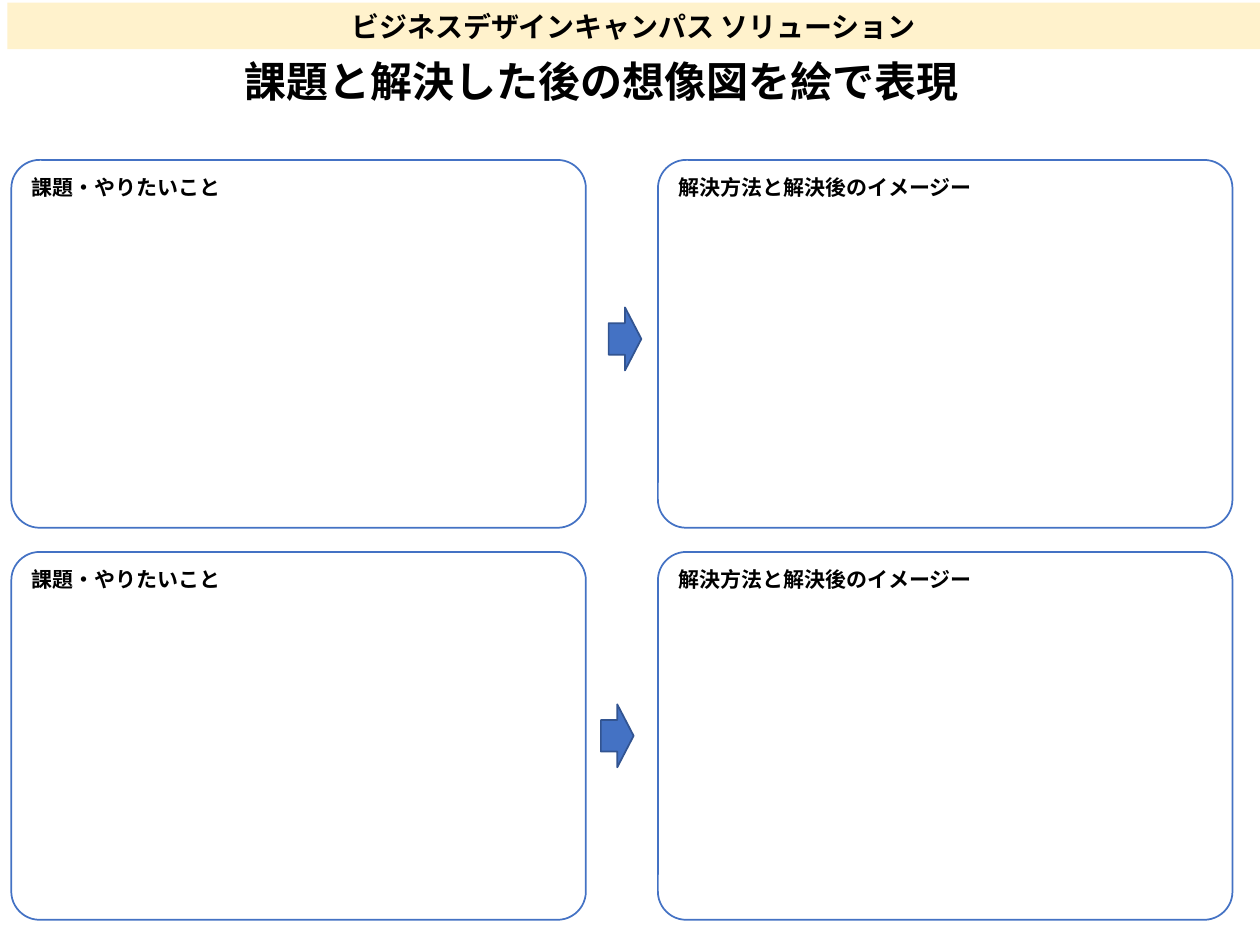
from pptx import Presentation
from pptx.dml.color import RGBColor
from pptx.enum.shapes import MSO_SHAPE as Shape
from pptx.enum.text import MSO_ANCHOR as Anchor, MSO_AUTO_SIZE as Auto, PP_ALIGN as Align
from pptx.oxml.ns import qn
from pptx.util import Pt
from lxml import etree

BLACK = RGBColor(0x00, 0x00, 0x00)
WHITE = RGBColor(0xFF, 0xFF, 0xFF)
CREAM = RGBColor(0xFF, 0xF2, 0xCC)
BLUE = RGBColor(0x44, 0x72, 0xC4)
NAVY = RGBColor(0x32, 0x54, 0x91)
FONT = "Noto Sans CJK JP"


def put_text(shape, text, size, align=Align.LEFT, anchor=Anchor.TOP, lead=None, grow=False):
    frame = shape.text_frame
    frame.word_wrap = True
    frame.vertical_anchor = anchor
    if grow:
        frame.auto_size = Auto.SHAPE_TO_FIT_TEXT
    para = frame.paragraphs[0]
    para.alignment = align
    if lead:
        para.line_spacing = Pt(lead)
    run = para.add_run()
    run.text = text
    font = run.font
    font.name, font.size, font.bold = FONT, Pt(size), True
    font.color.rgb = BLACK
    # Japanese text takes the East Asian typeface
    etree.SubElement(font._element, qn("a:ea")).set("typeface", FONT)


def add_box(kind, left, top, width, height, fill, line=None):
    box = slide.shapes.add_shape(kind, Pt(left), Pt(top), Pt(width), Pt(height))
    box.shadow.inherit = False
    box.fill.solid()
    box.fill.fore_color.rgb = fill
    if line is None:
        box.line.fill.background()
    else:
        box.line.color.rgb = line
        box.line.width = Pt(1)
    return box


deck = Presentation()
deck.slide_width, deck.slide_height = Pt(720), Pt(540)
slide = deck.slides.add_slide(deck.slide_layouts[6])

# Title
title = slide.shapes.add_textbox(Pt(130.3), Pt(28.1), Pt(432), Pt(36))
put_text(title, "課題と解決した後の想像図を絵で表現  ", 24, align=Align.CENTER, lead=29, grow=True)

# Header band
band = add_box(Shape.RECTANGLE, 4.3, 1.5, 715.7, 26.6, CREAM)
put_text(band, "ビジネスデザインキャンパス ソリューション", 16,
         align=Align.CENTER, anchor=Anchor.MIDDLE, grow=True)

# Panels: a problem on the left, its solution on the right
for left, label in ((6.5, "課題・やりたいこと"), (376, "解決方法と解決後のイメージー")):
    for top in (91.4, 315.4):
        panel = add_box(Shape.ROUNDED_RECTANGLE, left, top, 328.3, 210.2, WHITE, line=BLUE)
        panel.adjustments[0] = 0.077
        put_text(panel, label, 12)

# Arrows from problem to solution
for left, top in ((347.8, 175.7), (343.4, 402.5)):
    add_box(Shape.RIGHT_ARROW, left, top, 18.7, 36, BLUE, line=NAVY)

deck.save("out.pptx")
